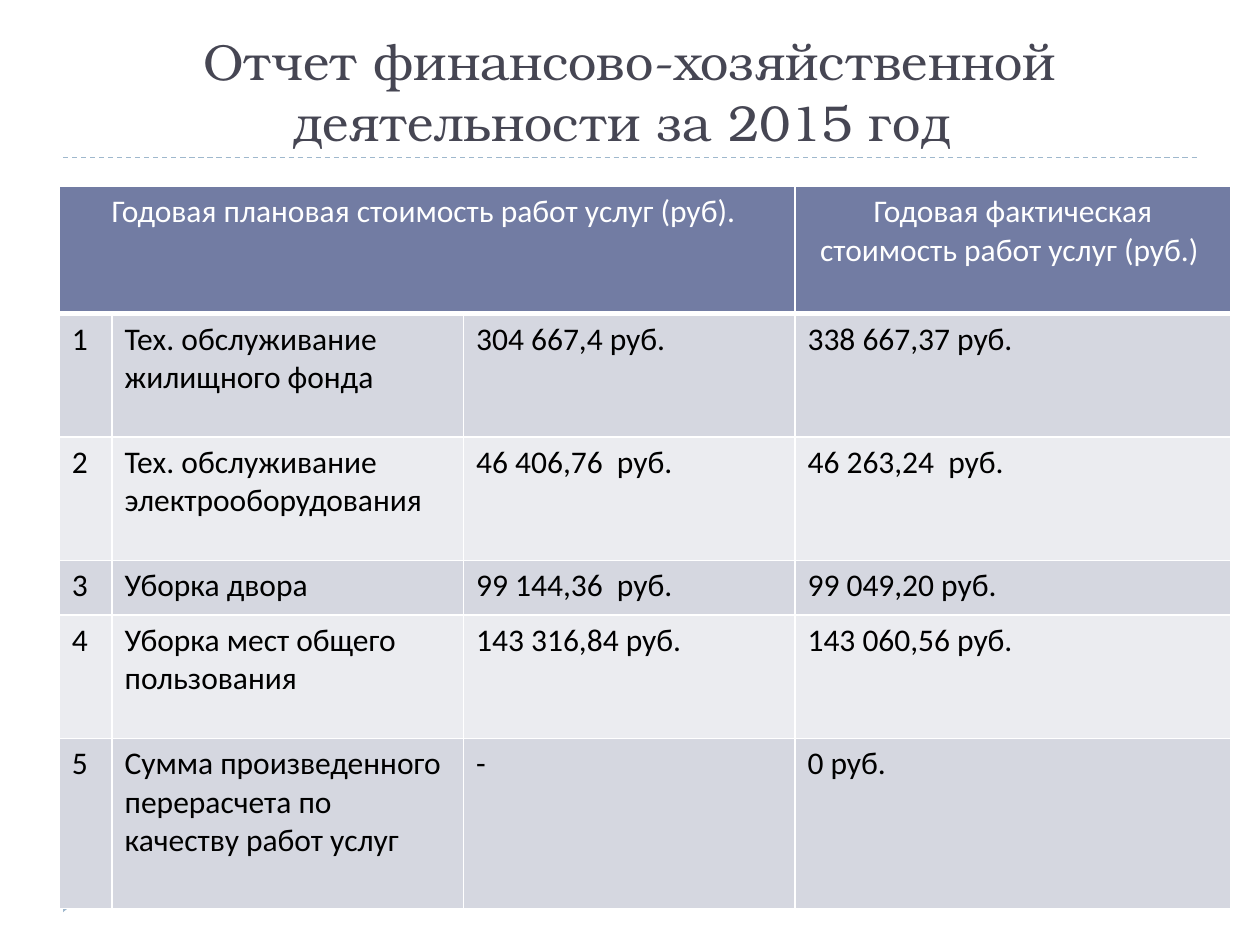
from typing import NamedTuple

from lxml.etree import SubElement
from pptx import Presentation
from pptx.dml.color import RGBColor
from pptx.enum.dml import MSO_LINE
from pptx.enum.shapes import MSO_CONNECTOR, MSO_SHAPE
from pptx.enum.text import MSO_ANCHOR, MSO_AUTO_SIZE, PP_ALIGN
from pptx.oxml import parse_xml
from pptx.oxml.ns import nsdecls, qn
from pptx.util import Inches, Pt

ACCENT = "9FB8CD"
HEAD = "727CA3"
BANDS = ("D5D7E0", "EBECF0")
WHITE = "FFFFFF"
COLS = (0.42, 2.79, 2.63, 3.46)


class Work(NamedTuple):
    name: str
    plan: str
    fact: str
    height: float


WORKS = (
    Work("Тех. обслуживание жилищного фонда", "304 667,4 руб.", "338 667,37 руб.", 0.98),
    Work("Тех. обслуживание электрооборудования", "46 406,76  руб.", "46 263,24  руб.", 0.98),
    Work("Уборка двора", "99 144,36  руб.", "99 049,20 руб.", 0.43),
    Work("Уборка мест общего пользования", "143 316,84 руб.", "143 060,56 руб.", 0.98),
    Work("Сумма произведенного перерасчета по качеству работ услуг", "-", "0 руб.", 1.35),
)


def color(value: str) -> RGBColor:
    return RGBColor.from_string(value)


def write(frame, text: str, font: str, size: float, ink: str, align=PP_ALIGN.LEFT) -> None:
    para = frame.paragraphs[0]
    para.alignment = align
    run = para.add_run()
    run.text = text
    run.font.name = font
    run.font.size = Pt(size)
    run.font.bold = False
    run.font.color.rgb = color(ink)


def paint(cell, fill: str, base: float = 1, top: float = 1) -> None:
    """Fill a cell and give it white borders; base and top are widths in points."""
    cell.fill.solid()
    cell.fill.fore_color.rgb = color(fill)
    props = cell._tc.get_or_add_tcPr()
    for place, (side, width) in enumerate((("L", 1), ("R", 1), ("T", top), ("B", base))):
        props.insert(place, parse_xml(
            f'<a:ln{side} {nsdecls("a")} w="{Pt(width)}"><a:solidFill>'
            f'<a:srgbClr val="{WHITE}"/></a:solidFill></a:ln{side}>'))


def add_title(slide) -> None:
    title = slide.shapes.title
    title.left, title.top = Inches(0.5), Inches(0.25)
    title.width, title.height = Inches(9), Inches(1)
    frame = title.text_frame
    frame.auto_size = MSO_AUTO_SIZE.NONE
    frame.vertical_anchor = MSO_ANCHOR.BOTTOM
    write(frame, "Отчет финансово-хозяйственной деятельности за 2015 год ",
          "TeX Gyre Bonum", 28.8, "464653", PP_ALIGN.CENTER)


def add_decor(slide) -> None:
    rule = slide.shapes.add_connector(
        MSO_CONNECTOR.STRAIGHT, Inches(0.5), Inches(1.25), Inches(9.5), Inches(1.25))
    rule.line.color.rgb = color(ACCENT)
    rule.line.width = Pt(0.75)
    rule.line.dash_style = MSO_LINE.DASH
    SubElement(rule._element.spPr, qn("a:effectLst"))

    mark = slide.shapes.add_shape(
        MSO_SHAPE.ISOSCELES_TRIANGLE, Inches(0.46), Inches(7.07), Inches(0.21), Inches(0.13))
    mark.rotation = 90
    mark.shadow.inherit = False
    mark.fill.solid()
    mark.fill.fore_color.rgb = color(ACCENT)
    mark.line.fill.background()


def add_costs(slide) -> None:
    heights = (1.01, *(work.height for work in WORKS))
    table = slide.shapes.add_table(
        len(heights), len(COLS), Inches(0.47), Inches(1.48),
        Inches(sum(COLS)), Inches(sum(heights))).table
    for col, width in zip(table.columns, COLS):
        col.width = Inches(width)
    for row, height in zip(table.rows, heights):
        row.height = Inches(height)

    for cell in table.rows[0].cells:
        paint(cell, HEAD, base=3)
    table.cell(0, 0).merge(table.cell(0, 2))
    heads = ((0, "Годовая плановая стоимость работ услуг (руб). "),
             (3, "Годовая фактическая стоимость работ услуг (руб.) "))
    for col, text in heads:
        write(table.cell(0, col).text_frame, text, "Calibri", 18, WHITE, PP_ALIGN.CENTER)

    for row, work in enumerate(WORKS, 1):
        texts = (str(row), work.name, work.plan, work.fact)
        for cell, text in zip(table.rows[row].cells, texts):
            paint(cell, BANDS[(row - 1) % 2], top=3 if row == 1 else 1)
            write(cell.text_frame, text, "Calibri", 18, "000000")


def main() -> None:
    deck = Presentation()
    deck.slide_width, deck.slide_height = Inches(10), Inches(7.5)
    slide = deck.slides.add_slide(deck.slide_layouts.get_by_name("Title Only"))
    add_decor(slide)
    add_title(slide)
    add_costs(slide)
    deck.save("out.pptx")


if __name__ == "__main__":
    main()
